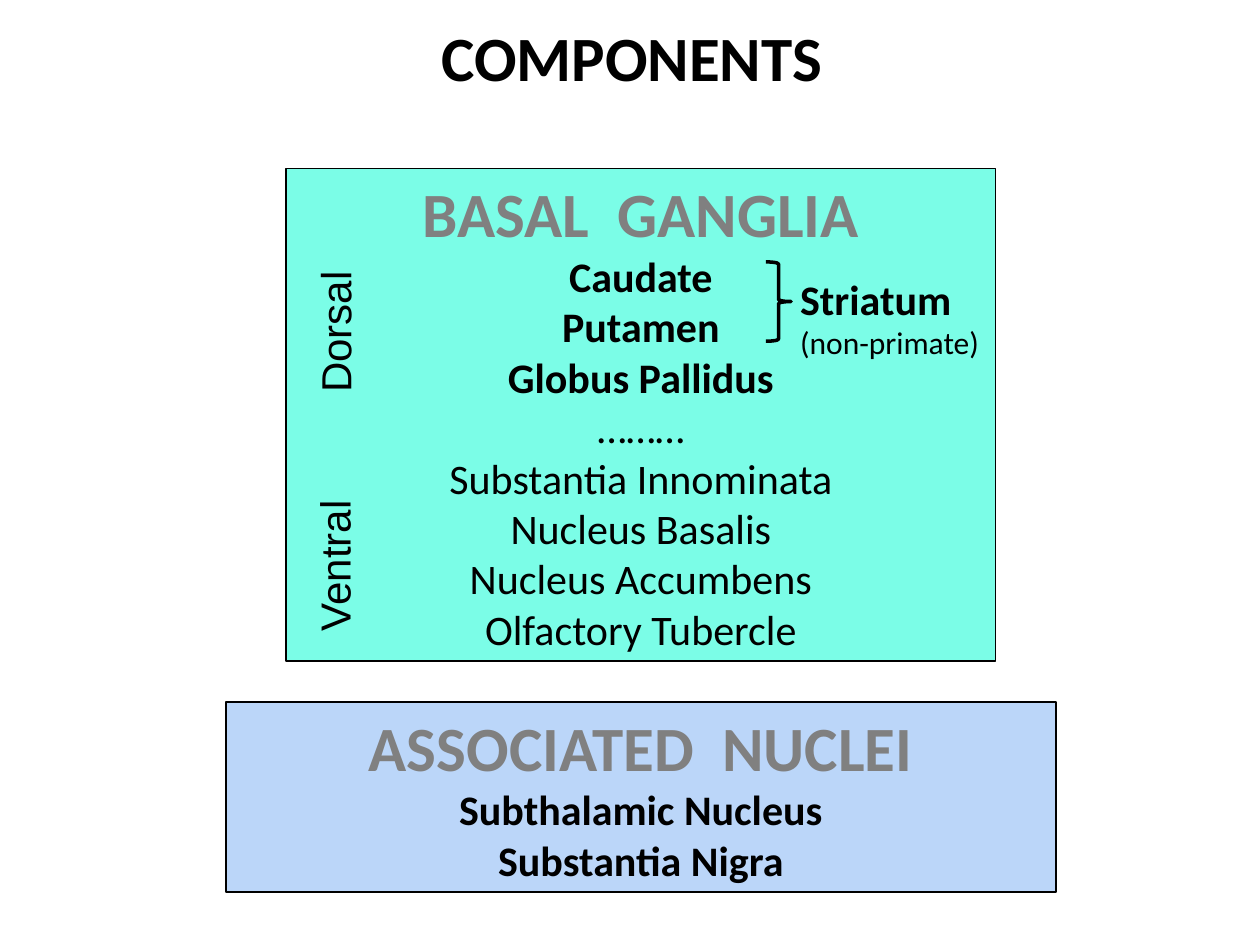
from pptx import Presentation
from pptx.dml.color import RGBColor
from pptx.enum.shapes import MSO_SHAPE
from pptx.enum.text import MSO_ANCHOR, PP_ALIGN
from pptx.util import Cm, Pt

BLACK, GREY = "000000", "808080"
HEADING = {"size": Pt(36), "bold": True, "name": "Calibri"}
STRONG = {"size": Pt(24), "bold": True, "name": "Calibri"}
PLAIN = {**STRONG, "bold": False}
NOTE = {**PLAIN, "size": Pt(18)}
SIDE = {**PLAIN, "name": "Arial"}


def rgb(value):
    return RGBColor.from_string(value)


def write(shape, lines, align, wrap=True):
    """Fill a shape with one paragraph per (text, format, colour)."""
    frame = shape.text_frame
    frame.word_wrap = wrap
    frame.vertical_anchor = MSO_ANCHOR.TOP
    for index, (text, style, color) in enumerate(lines):
        paragraph = frame.add_paragraph() if index else frame.paragraphs[0]
        paragraph.alignment = align
        run = paragraph.add_run()
        run.text = text
        run.font.color.rgb = rgb(color)
        for key, value in style.items():
            setattr(run.font, key, value)


prs = Presentation()
prs.slide_width, prs.slide_height = Cm(25.4), Cm(19.05)
slide = prs.slides.add_slide(prs.slide_layouts[5])
shapes = slide.shapes

# Title
title = shapes.title
title.left, title.top, title.width, title.height = Cm(8.64), Cm(0.25), Cm(8.56), Cm(1.78)
write(title, [("COMPONENTS", HEADING, BLACK)], PP_ALIGN.LEFT)

# Panels: place, fill, heading, bold names, plain names
panels = [
    ((5.77, 3.4, 14.3, 9.93), "7BFDE7", "BASAL  GANGLIA",
     ["Caudate", "Putamen", "Globus Pallidus"],
     ["………", "Substantia Innominata", "Nucleus Basalis",
      "Nucleus Accumbens", "Olfactory Tubercle"]),
    ((4.55, 14.15, 16.74, 3.84), "BBD6F9", "ASSOCIATED  NUCLEI",
     ["Subthalamic Nucleus", "Substantia Nigra"], []),
]
for place, fill, heading, main_nuclei, other_nuclei in panels:
    panel = shapes.add_shape(MSO_SHAPE.RECTANGLE, *map(Cm, place))
    panel.shadow.inherit = False
    panel.fill.solid()
    panel.fill.fore_color.rgb = rgb(fill)
    panel.line.color.rgb = rgb(BLACK)
    panel.line.width = Pt(1)
    lines = [(heading, HEADING, GREY)]
    lines += [(name, STRONG, BLACK) for name in main_nuclei]
    lines += [(name, PLAIN, BLACK) for name in other_nuclei]
    write(panel, lines, PP_ALIGN.CENTER)

# Labels beside the names
labels = [
    ((5.26, 6.05, 2.97, 1.27), 270, [("Dorsal", SIDE, BLACK)]),
    ((5.13, 10.74, 3.2, 1.27), 270, [("Ventral", SIDE, BLACK)]),
    ((15.88, 5.38, 4.17, 2.06), 0,
     [("Striatum", STRONG, BLACK), ("(non-primate)", NOTE, BLACK)]),
]
for place, rotation, lines in labels:
    label = shapes.add_textbox(*map(Cm, place))
    label.rotation = rotation
    write(label, lines, PP_ALIGN.LEFT, wrap=False)

# Brace joining caudate and putamen
brace = shapes.add_shape(MSO_SHAPE.RIGHT_BRACE, Cm(15.44), Cm(5.28), Cm(0.51), Cm(1.6))
brace.shadow.inherit = False
brace.fill.background()
brace.line.color.rgb = rgb(BLACK)
brace.line.width = Pt(2)

prs.save("out.pptx")
